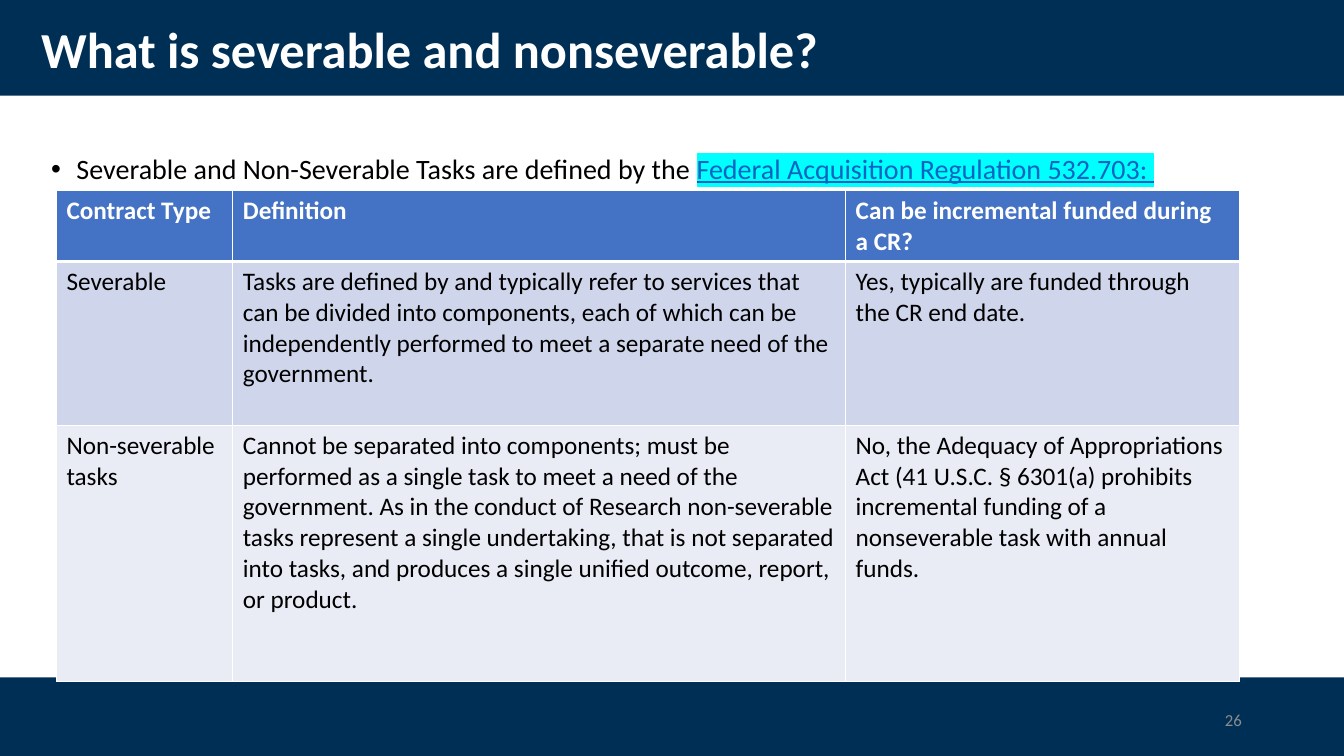
from dataclasses import dataclass

from lxml import etree
from pptx import Presentation
from pptx import util as u
from pptx.dml.color import RGBColor
from pptx.enum import shapes, text
from pptx.oxml import ns


@dataclass(frozen=True)
class Theme:
    """Colours as RRGGBB and type sizes in points."""
    font: str = "Calibri"
    navy: str = "002F56"
    white: str = "FFFFFF"
    ink: str = "000000"
    grey: str = "8C8C8C"
    link: str = "0563C1"
    highlight: str = "00FFFF"
    header: str = "4472C4"
    bands: tuple = ("CFD5EA", "E9EBF5")
    title_size: int = 36
    body_size: int = 20
    table_size: int = 18
    page_size: int = 12


class SlideBuilder:
    """Places styled elements on a grid of 40 columns by 30 rows."""

    def __init__(self, deck, theme):
        self.theme = theme
        self.column = deck.slide_width / 40
        self.row = deck.slide_height / 30
        self.slide = deck.slides.add_slide(deck.slide_layouts[6])

    def area(self, left, top, width, height):
        """Turn grid units into slide lengths."""
        return (u.Emu(round(left * self.column)), u.Emu(round(top * self.row)),
                u.Emu(round(width * self.column)), u.Emu(round(height * self.row)))

    def style(self, font, size, color, bold=False):
        """Apply the theme font with a size, colour and weight."""
        font.name = self.theme.font
        font.size = u.Pt(size)
        font.bold = bold
        font.color.rgb = RGBColor.from_string(color)

    def color_fill(self, parent, tag, color):
        """Add an element of the given tag that holds an RGB colour."""
        element = etree.SubElement(parent, ns.qn(tag))
        etree.SubElement(element, ns.qn("a:srgbClr"), val=color)
        return element

    def band(self, *area):
        """Draw a full-colour band."""
        band = self.slide.shapes.add_shape(
            shapes.MSO_SHAPE.RECTANGLE, *self.area(*area))
        band.shadow.inherit = False
        band.fill.solid()
        band.fill.fore_color.rgb = RGBColor.from_string(self.theme.navy)
        band.line.fill.background()

    def label(self, words, area, size, color, bold=False,
              align=text.PP_ALIGN.LEFT, anchor=text.MSO_ANCHOR.MIDDLE):
        """Write one paragraph and return it."""
        frame = self.slide.shapes.add_textbox(*self.area(*area)).text_frame
        frame.word_wrap = True
        frame.vertical_anchor = anchor
        frame.text = words
        paragraph = frame.paragraphs[0]
        paragraph.alignment = align
        paragraph.line_spacing = 0.9
        self.style(paragraph.runs[0].font, size, color, bold)
        return paragraph

    def bullet(self, words, reference, area):
        """Write a bullet that ends in a highlighted reference."""
        theme = self.theme
        paragraph = self.label(words, area, theme.body_size, theme.ink,
                               anchor=text.MSO_ANCHOR.TOP)
        properties = paragraph._p.get_or_add_pPr()
        properties.set("marL", str(u.Inches(0.25)))
        properties.set("indent", str(-u.Inches(0.25)))
        etree.SubElement(properties, ns.qn("a:buFont"), typeface="Arial")
        etree.SubElement(properties, ns.qn("a:buChar"), char="•")
        citation = paragraph.add_run()
        citation.text = reference
        self.style(citation.font, theme.body_size, theme.link)
        citation.font.underline = True
        run_properties = citation._r.get_or_add_rPr()
        marker = self.color_fill(run_properties, "a:highlight", theme.highlight)
        run_properties.find(ns.qn("a:solidFill")).addnext(marker)

    def cell(self, cell, words, fill, color, bold, bottom):
        """Fill one table cell and draw its borders."""
        cell.text = words
        self.style(cell.text_frame.paragraphs[0].runs[0].font,
                   self.theme.table_size, color, bold)
        properties = cell._tc.get_or_add_tcPr()
        for side, points in (("L", 1), ("R", 1), ("T", 1), ("B", bottom)):
            border = etree.SubElement(properties, ns.qn(f"a:ln{side}"),
                                      w=str(u.Pt(points)))
            self.color_fill(border, "a:solidFill", self.theme.white)
        cell.fill.solid()
        cell.fill.fore_color.rgb = RGBColor.from_string(fill)

    def table(self, left, top, widths, heights, rows):
        """Draw a table with a header row and banded body rows."""
        theme = self.theme
        area = self.area(left, top, sum(widths), sum(heights))
        table = self.slide.shapes.add_table(len(rows), len(widths), *area).table
        for column, width in zip(table.columns, widths):
            column.width = u.Emu(round(width * self.column))
        for index, (height, entries) in enumerate(zip(heights, rows)):
            table.rows[index].height = u.Emu(round(height * self.row))
            is_header = index == 0
            fill = theme.header if is_header else theme.bands[(index - 1) % 2]
            color = theme.white if is_header else theme.ink
            for position, words in enumerate(entries):
                self.cell(table.cell(index, position), words, fill, color,
                          is_header, 3 if is_header else 1)


CONTRACTS = [
    ("Contract Type", "Definition", "Can be incremental funded during a CR?"),
    ("Severable",
     "Tasks are defined by and typically refer to services that can be divided "
     "into components, each of which can be independently performed to meet a "
     "separate need of the government.",
     "Yes, typically are funded through the CR end date."),
    ("Non-severable tasks",
     "Cannot be separated into components; must be performed as a single task "
     "to meet a need of the government. As in the conduct of Research "
     "non-severable tasks represent a single undertaking, that is not separated "
     "into tasks, and produces a single unified outcome, report, or product.",
     "No, the Adequacy of Appropriations Act (41 U.S.C. § 6301(a) prohibits "
     "incremental funding of a nonseverable task with annual funds."),
]


def main():
    """Build and save the slide."""
    deck = Presentation()
    deck.slide_width, deck.slide_height = u.Inches(13.33), u.Inches(7.5)
    theme = Theme()
    page = SlideBuilder(deck, theme)
    page.band(0, 0, 40, 3.8)
    page.band(0, 26.88, 40, 3.12)
    page.label("What is severable and nonseverable?", (0.93, 0.72, 34.5, 2.72),
               theme.title_size, theme.white, bold=True)
    page.bullet("Severable and Non-Severable Tasks are defined by the ",
                "Federal Acquisition Regulation 532.703: ",
                (1.23, 5.96, 34.5, 19.04))
    page.label("26", (28.26, 27.8, 9, 1.6), theme.page_size, theme.grey,
               align=text.PP_ALIGN.RIGHT)
    page.table(1.68, 7.56, (5.25, 18.24, 11.73), (2.82, 6.5, 10.15), CONTRACTS)
    deck.save("out.pptx")


if __name__ == "__main__":
    main()
